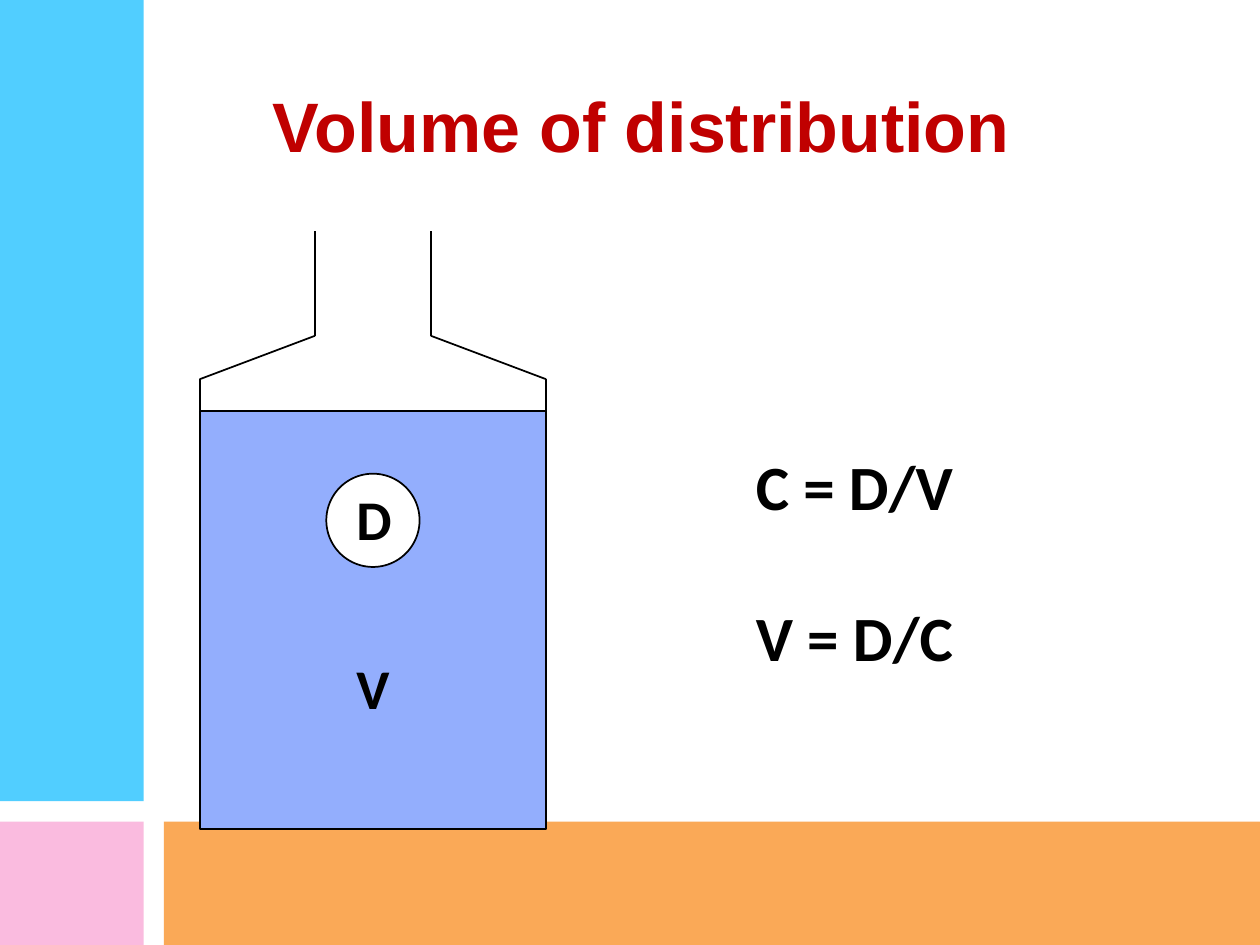
from itertools import pairwise
from lxml import etree
from pptx import Presentation
from pptx.dml.color import RGBColor
from pptx.enum.shapes import MSO_CONNECTOR, MSO_SHAPE
from pptx.enum.text import MSO_ANCHOR, MSO_AUTO_SIZE, PP_ALIGN
from pptx.oxml.ns import qn
from pptx.util import Inches, Pt

RECT, OVAL = MSO_SHAPE.RECTANGLE, MSO_SHAPE.OVAL
LINE = MSO_CONNECTOR.STRAIGHT
LEFT, MID = PP_ALIGN.LEFT, PP_ALIGN.CENTER
TOP, BASE = MSO_ANCHOR.TOP, MSO_ANCHOR.BOTTOM
GROW, FIXED = MSO_AUTO_SIZE.SHAPE_TO_FIT_TEXT, MSO_AUTO_SIZE.NONE

COLS, ROWS = 100, 75
HUES = {"orange": "F9942E", "pink": "F9ABD7", "sky": "26C2FF",
        "fluid": "93AEFD", "white": "FFFFFF", "ink": "000000", "red": "C00000"}

SIDE, BODY, FLOOR = 11.4, 13, 65.2
BANDS = [("orange", BODY, FLOOR, COLS - BODY, ROWS - FLOOR),
         ("pink", 0, FLOOR, SIDE, ROWS - FLOOR),
         ("sky", 0, 0, SIDE, 63.6)]

AXIS = 29.6
WALL = [(13.75, 65.8), (13.75, 30.1), (4.6, 26.65), (4.6, 18.3)]
LEVEL, DOSE, DOSE_Y = 32.6, 7.4, 37.6

HEAD = ("Volume of distribution", 14.6, 3.6, 72.6, 10.1)
MARKS = [(("D",), 27.3, 38, 5.2, 6.3, 32),
         (("V",), 27.3, 51.4, 4.9, 6.3, 32),
         (("C = D/V", "V = D/C"), 59, 35, 19.6, 19, 36)]
GAP = 43

deck = Presentation()
deck.slide_width, deck.slide_height = Inches(10), Inches(7.5)
slide = deck.slides.add_slide(deck.slide_layouts[6])
shapes = slide.shapes


def grid(x, y):
    return round(deck.slide_width * x / COLS), round(deck.slide_height * y / ROWS)


def block(kind, hue, x, y, w, h, edge=True, alpha=None):
    item = shapes.add_shape(kind, *grid(x, y), *grid(w, h))
    item.shadow.inherit = False
    item.fill.solid()
    item.fill.fore_color.rgb = RGBColor.from_string(HUES[hue])
    if alpha:
        tint = item.fill._xPr.find(".//" + qn("a:srgbClr"))
        etree.SubElement(tint, qn("a:alpha")).set("val", str(alpha * 1000))
    if edge:
        item.line.color.rgb = RGBColor.from_string(HUES["ink"])
        item.line.width = Pt(1)
    else:
        item.line.fill.background()


def stroke(start, end):
    item = shapes.add_connector(LINE, *grid(*start), *grid(*end))
    item.line.color.rgb = RGBColor.from_string(HUES["ink"])
    item.line.width = Pt(1)
    etree.SubElement(item._element.spPr, qn("a:effectLst"))


def label(lines, x, y, w, h, size, face="Calibri", hue="ink",
          align=LEFT, anchor=TOP, wrap=False):
    frame = shapes.add_textbox(*grid(x, y), *grid(w, h)).text_frame
    frame.word_wrap = wrap
    frame.auto_size = FIXED if wrap else GROW
    frame.vertical_anchor = anchor
    for i, text in enumerate(lines):
        para = frame.add_paragraph() if i else frame.paragraphs[0]
        para.alignment = align
        if i:
            para.space_before = Pt(GAP)
        run = para.add_run()
        run.text = text
        run.font.name, run.font.size, run.font.bold = face, Pt(size), True
        run.font.color.rgb = RGBColor.from_string(HUES[hue])


for hue, *box in BANDS:
    block(RECT, hue, *box, edge=False, alpha=80)

label(HEAD[:1], *HEAD[1:], 40, "Arial", "red", MID, BASE, True)

for sign in (-1, 1):
    for start, end in pairwise((AXIS + sign * x, y) for x, y in WALL):
        stroke(start, end)
half, base = WALL[0]
stroke((AXIS - half, base), (AXIS + half, base))

block(RECT, "fluid", AXIS - half, LEVEL, 2 * half, base - LEVEL)
block(OVAL, "white", AXIS - DOSE / 2, DOSE_Y, DOSE, DOSE)

for mark in MARKS:
    label(*mark)

deck.save("out.pptx")
